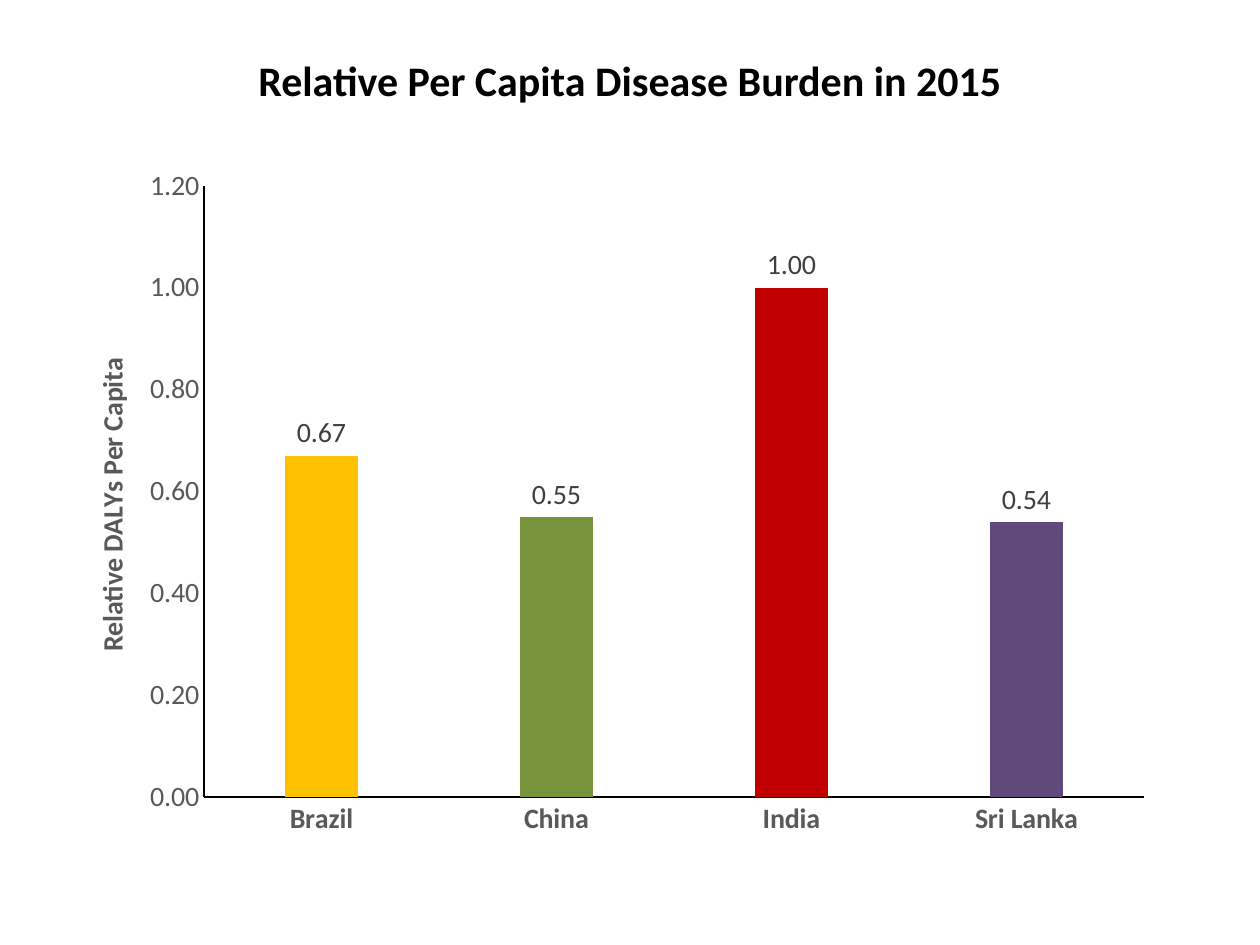
from lxml.etree import SubElement
from pptx import Presentation
from pptx.chart.data import CategoryChartData
from pptx.dml.color import RGBColor
from pptx.enum.chart import XL_CHART_TYPE, XL_LABEL_POSITION, XL_TICK_MARK
from pptx.enum.text import MSO_ANCHOR, PP_ALIGN
from pptx.oxml.ns import qn
from pptx.util import Emu, Pt

PX_PER_INCH = 126
FONT = "Calibri"
BLACK, GRAY, DARK_GRAY = "000000", "595959", "404040"
CHART_BOX = (54, 155, 1111, 694)
COUNTRIES = [
    ("Brazil", 0.67, "FFC000"),
    ("China", 0.55, "77933C"),
    ("India", 1.00, "C00000"),
    ("Sri Lanka", 0.54, "604A7B"),
]


def px(length):
    return Emu(round(length * 914400 / PX_PER_INCH))


def color(hex_value):
    return RGBColor.from_string(hex_value)


def style_font(font, size, hex_value, bold=False):
    font.name = FONT
    font.size = Pt(size)
    font.bold = bold
    font.color.rgb = color(hex_value)


def place_in_chart(layout, left, top, width=None, height=None):
    """Fix a chart part at slide positions; a given size means the inner plot area."""
    chart_left, chart_top, chart_width, chart_height = CHART_BOX
    manual = SubElement(layout, qn("c:manualLayout"))
    settings = {"xMode": "edge", "yMode": "edge",
                "x": round((left - chart_left) / chart_width, 4),
                "y": round((top - chart_top) / chart_height, 4)}
    if width:
        settings = {"layoutTarget": "inner", **settings,
                    "w": round(width / chart_width, 4),
                    "h": round(height / chart_height, 4)}
    for name, value in settings.items():
        SubElement(manual, qn(f"c:{name}")).set("val", str(value))


def add_title(slide, text):
    title = slide.shapes.title
    title.left, title.top, title.width, title.height = map(px, (0, 35, 1260, 90))
    title.text_frame.text = text
    title.text_frame.vertical_anchor = MSO_ANCHOR.MIDDLE
    paragraph = title.text_frame.paragraphs[0]
    paragraph.alignment = PP_ALIGN.CENTER
    style_font(paragraph.font, 24, BLACK, bold=True)


def style_axis(axis, bold=False):
    axis.has_major_gridlines = False
    axis.major_tick_mark = axis.minor_tick_mark = XL_TICK_MARK.NONE
    axis.format.line.color.rgb = color(BLACK)
    axis.format.line.width = Pt(0.75)
    style_font(axis.tick_labels.font, 16, GRAY, bold)


def style_value_axis(axis, title):
    style_axis(axis)
    axis.minimum_scale, axis.maximum_scale, axis.major_unit = 0, 1.2, 0.2
    axis.tick_labels.number_format = "0.00"
    axis.tick_labels.number_format_is_linked = False
    text_frame = axis.axis_title.text_frame
    text_frame.text = title
    style_font(text_frame.paragraphs[0].font, 16, GRAY, bold=True)
    place_in_chart(axis.axis_title._element.get_or_add_layout()
                   if hasattr(axis.axis_title._element, "get_or_add_layout")
                   else axis.axis_title._element.find(qn("c:layout")), 88, 353)


def style_columns(plot):
    plot.gap_width, plot.overlap = 219, -27
    plot.vary_by_categories = False
    series = plot.series[0]
    series.format.fill.solid()
    series.format.fill.fore_color.rgb = color("C00000")
    for index, (_, _, fill_color) in enumerate(COUNTRIES):
        fill = series.points[index].format.fill
        fill.solid()
        fill.fore_color.rgb = color(fill_color)
    labels = series.data_labels
    labels.show_value = True
    labels.position = XL_LABEL_POSITION.OUTSIDE_END
    labels.number_format = "0.00"
    labels.number_format_is_linked = False
    style_font(labels.font, 16, DARK_GRAY)


def add_burden_chart(slide):
    data = CategoryChartData(number_format="0.00")
    data.categories = [name for name, _, _ in COUNTRIES]
    data.add_series("Series 1", [value for _, value, _ in COUNTRIES])
    chart = slide.shapes.add_chart(
        XL_CHART_TYPE.COLUMN_CLUSTERED, *map(px, CHART_BOX), data).chart
    chart.has_legend = chart.has_title = False
    style_font(chart.font, 16, BLACK)
    style_axis(chart.category_axis, bold=True)
    style_value_axis(chart.value_axis, "Relative DALYs Per Capita")
    style_columns(chart.plots[0])
    plot_area = chart._chartSpace.chart.plotArea
    layout = plot_area.find(qn("c:layout"))
    if layout is None:
        layout = SubElement(plot_area, qn("c:layout"))
        plot_area.insert(0, layout)
    place_in_chart(layout, 204, 186, 940, 611)


def main():
    presentation = Presentation()
    presentation.slide_width, presentation.slide_height = px(1260), px(945)
    slide = presentation.slides.add_slide(presentation.slide_layouts[5])
    add_title(slide, "Relative Per Capita Disease Burden in 2015")
    add_burden_chart(slide)
    presentation.save("out.pptx")


if __name__ == "__main__":
    main()
